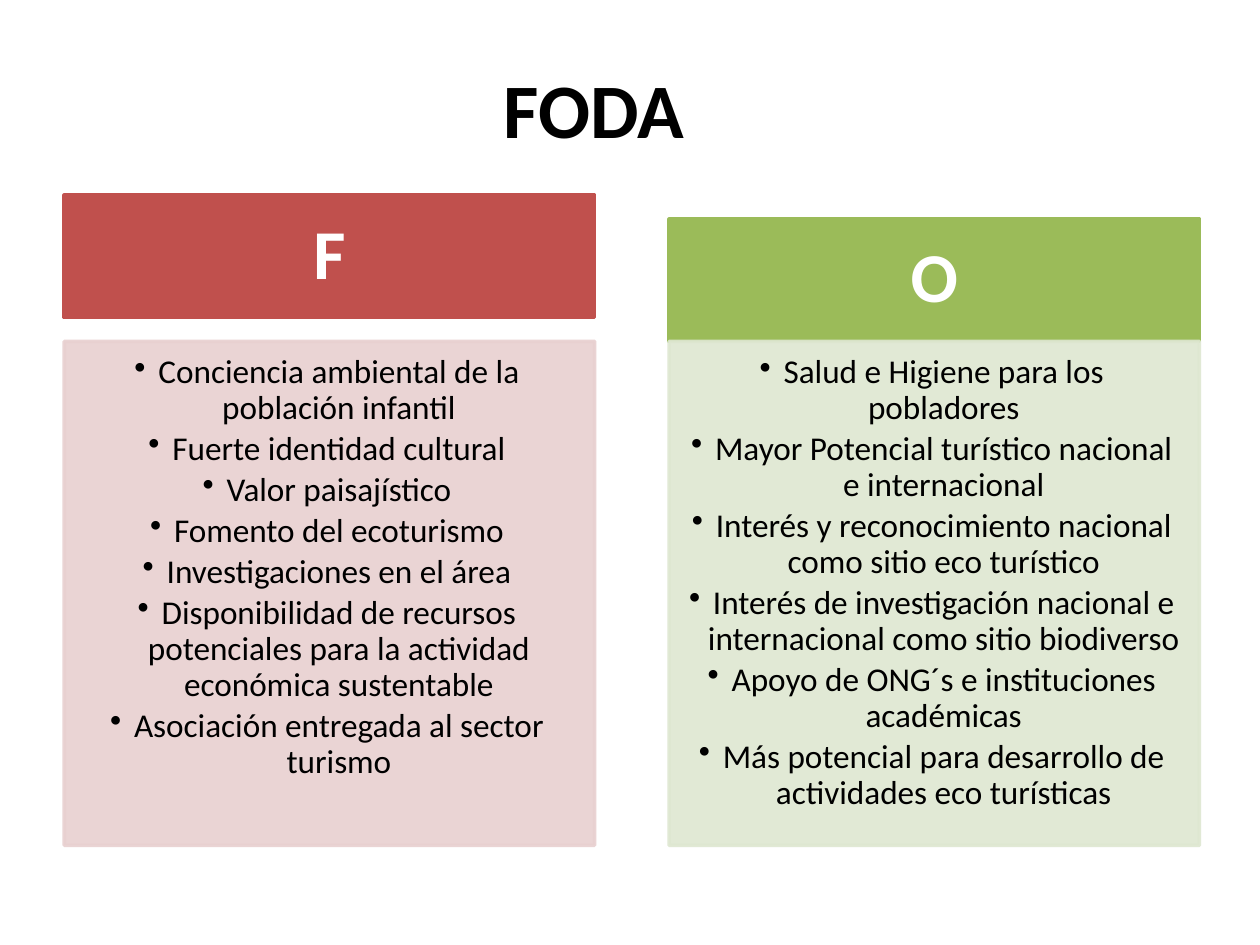
from lxml import etree
from pptx import Presentation
from pptx.dml.color import RGBColor
from pptx.enum.shapes import MSO_SHAPE
from pptx.enum.text import MSO_ANCHOR, MSO_AUTO_SIZE, PP_ALIGN
from pptx.oxml.ns import qn
from pptx.util import Inches, Pt

BLACK = RGBColor(0x00, 0x00, 0x00)
WHITE = RGBColor(0xFF, 0xFF, 0xFF)
RED = RGBColor(0xC0, 0x50, 0x4D)
PALE_RED = RGBColor(0xE8, 0xD0, 0xD0)
GREEN = RGBColor(0x9B, 0xBB, 0x59)
PALE_GREEN = RGBColor(0xDE, 0xE7, 0xD1)
FONT = "Calibri"
COLUMN_W, HEAD_H, BODY_TOP, BODY_H = 4.21, 0.97, 2.71, 4

COLUMNS = [
    ("F", 0.51, 1.55, RED, PALE_RED, [
        "Conciencia ambiental de la población infantil",
        "Fuerte identidad cultural",
        "Valor paisajístico",
        "Fomento del ecoturismo",
        "Investigaciones en el área",
        "Disponibilidad de recursos potenciales para la actividad económica sustentable",
        "Asociación entregada al sector turismo",
    ]),
    ("O", 5.31, BODY_TOP - HEAD_H, GREEN, PALE_GREEN, [
        "Salud e Higiene para los pobladores",
        "Mayor Potencial turístico nacional e internacional",
        "Interés y reconocimiento nacional como sitio eco turístico",
        "Interés de investigación nacional e internacional como sitio biodiverso",
        "Apoyo de ONG´s e instituciones académicas",
        "Más potencial para desarrollo de actividades eco turísticas",
    ]),
]


def add_panel(left, top, height, color, insets, anchor):
    s = slide.shapes.add_shape(MSO_SHAPE.RECTANGLE, Inches(left), Inches(top),
                               Inches(COLUMN_W), Inches(height))
    s.shadow.inherit = False
    s.fill.solid()
    s.fill.fore_color.rgb = color
    s.line.color.rgb = color
    s.line.width = Pt(2)
    tf = s.text_frame
    tf.word_wrap = True
    tf.vertical_anchor = anchor
    tf.margin_left, tf.margin_top, tf.margin_right, tf.margin_bottom = map(Inches, insets)
    return s


def add_run(p, text, size, color, bold=False):
    r = p.add_run()
    r.text = text
    r.font.name = FONT
    r.font.size = Pt(size)
    r.font.bold = bold
    r.font.color.rgb = color


prs = Presentation()
prs.slide_width = Inches(10)
prs.slide_height = Inches(7.5)
slide = prs.slides.add_slide(prs.slide_layouts[6])

title = slide.shapes.add_textbox(Inches(3.9), Inches(0.44), Inches(4.96), Inches(0.84))
tf = title.text_frame
tf.word_wrap = True
tf.auto_size = MSO_AUTO_SIZE.SHAPE_TO_FIT_TEXT
add_run(tf.paragraphs[0], "FODA", 44, BLACK, True)

for letter, left, head_top, color, pale, items in COLUMNS:
    head = add_panel(left, head_top, HEAD_H, color, (0.31, 0.18, 0.31, 0.18), MSO_ANCHOR.MIDDLE)
    p = head.text_frame.paragraphs[0]
    p.alignment = PP_ALIGN.CENTER
    p.line_spacing = 0.9
    add_run(p, letter, 40, WHITE, True)

    body = add_panel(left, BODY_TOP, BODY_H, pale, (0.11, 0.11, 0.15, 0.17), MSO_ANCHOR.TOP)
    for clr in body.fill._xPr.iter(qn("a:srgbClr")):
        etree.SubElement(clr, qn("a:alpha"), val="90000")
    tf = body.text_frame
    for i, item in enumerate(items):
        p = tf.add_paragraph() if i else tf.paragraphs[0]
        pPr = p._p.get_or_add_pPr()
        pPr.set("marL", str(Inches(0.19)))
        pPr.set("indent", str(Inches(-0.19)))
        etree.SubElement(pPr, qn("a:buChar"), char="•")
        p.level = 1
        p.alignment = PP_ALIGN.CENTER
        p.line_spacing = 0.9
        p.space_after = Pt(2.85)
        add_run(p, item, 19, BLACK)

prs.save("out.pptx")
